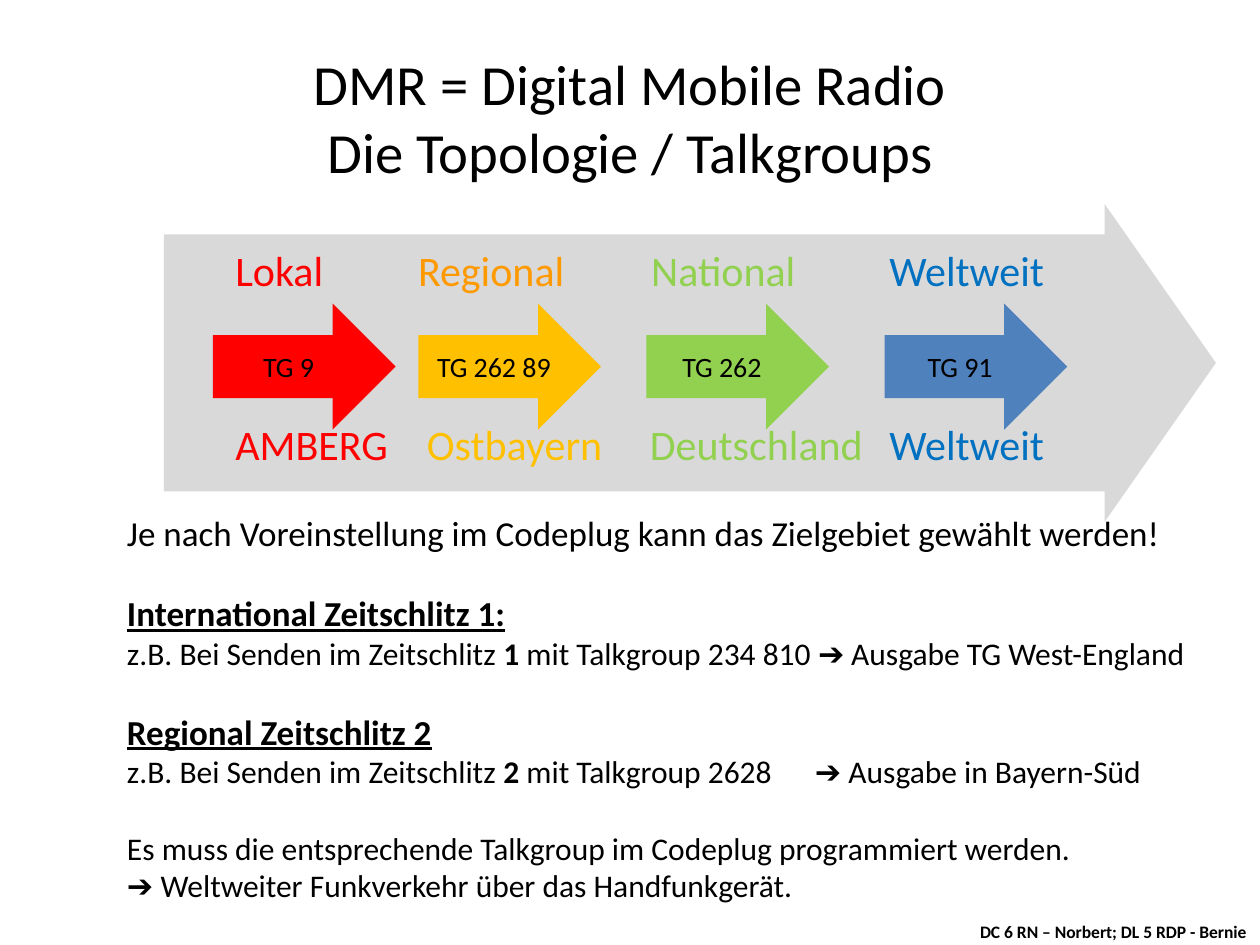
from pptx import Presentation
from pptx.dml.color import RGBColor
from pptx.enum.shapes import MSO_SHAPE
from pptx.enum.text import MSO_ANCHOR, MSO_AUTO_SIZE, PP_ALIGN
from pptx.oxml.ns import qn
from pptx.util import Inches, Pt
from lxml import etree

RIGHT_ARROW = MSO_SHAPE.RIGHT_ARROW
MIDDLE = MSO_ANCHOR.MIDDLE
LEFT, CENTER = PP_ALIGN.LEFT, PP_ALIGN.CENTER
FIT_SHAPE = MSO_AUTO_SIZE.SHAPE_TO_FIT_TEXT
BLANK_LINE = 22

deck = Presentation()
deck.slide_width, deck.slide_height = Inches(10), Inches(7.5)
page = deck.slides.add_slide(deck.slide_layouts[6])


def paint(color_format, color):
    color_format.rgb = RGBColor.from_string(color)


def write(para, text, size=18, color="000000", bold=False, underline=False,
          align=LEFT, before=0, tabs=()):
    para.alignment = align
    para.space_before = Pt(before)
    if tabs:
        properties = para._p.get_or_add_pPr()
        tab_list = etree.SubElement(properties, qn("a:tabLst"))
        for position in tabs:
            etree.SubElement(tab_list, qn("a:tab"), pos=str(Inches(position)), algn="l")
    for number, line in enumerate(text.split("\n")):
        if number:
            para.add_line_break()
        span = para.add_run()
        span.text = line
        span.font.name = "Calibri"
        span.font.size = Pt(size)
        span.font.bold = bold
        span.font.underline = underline
        paint(span.font.color, color)


title = page.shapes.add_textbox(Inches(0.5), Inches(0.3), Inches(9), Inches(1.25))
title.text_frame.word_wrap = True
title.text_frame.vertical_anchor = MIDDLE
write(title.text_frame.paragraphs[0],
      "DMR = Digital Mobile Radio\nDie Topologie / Talkgroups", size=32.4, align=CENTER)

arrows = [
    (1.3, 1.62, 8.35, 2.52, "D9D9D9", ""),
    (1.69, 2.41, 1.45, 1, "FF0000", "TG 9"),
    (3.32, 2.41, 1.45, 1, "FFC000", "TG 262 89"),
    (5.13, 2.41, 1.45, 1, "92D050", "TG 262"),
    (7.02, 2.41, 1.45, 1, "4F81BD", "TG 91"),
]
for left, top, width, height, color, talkgroup in arrows:
    arrow = page.shapes.add_shape(RIGHT_ARROW, Inches(left), Inches(top),
                                  Inches(width), Inches(height))
    arrow.shadow.inherit = False
    arrow.fill.solid()
    paint(arrow.fill.fore_color, color)
    arrow.line.fill.background()
    if talkgroup:
        arrow.text_frame.vertical_anchor = MIDDLE
        write(arrow.text_frame.paragraphs[0], talkgroup, size=16, align=CENTER)
    else:
        arrow.adjustments[0] = 0.81
        arrow.adjustments[1] = 0.35

label_rows = [
    (3.27, 7.87, (1.52, 3.29, 5.19),
     [("AMBERG", "FF0000"), ("Ostbayern", "FFC000"),
      ("Deutschland", "92D050"), ("Weltweit", "0070C0")]),
    (1.89, 7.4, (1.45, 3.3, 5.19),
     [("Lokal", "FF0000"), ("Regional", "FF9900"),
      ("National", "92D050"), ("Weltweit", "0070C0")]),
]
for top, width, stops, labels in label_rows:
    box = page.shapes.add_textbox(Inches(1.77), Inches(top), Inches(width), Inches(0.5))
    box.text_frame.word_wrap = True
    box.text_frame.auto_size = FIT_SHAPE
    para = box.text_frame.paragraphs[0]
    for number, (label, color) in enumerate(labels):
        write(para, label if number == 0 else "\t" + label, size=24, color=color,
              tabs=stops if number == 0 else ())

heading = {"size": 20, "bold": True, "underline": True}
strong = {"bold": True}
explanation = [
    (0, (), [("Je nach Voreinstellung im Codeplug kann das Zielgebiet gewählt werden!",
              {"size": 20})]),
    (BLANK_LINE, (), [("International Zeitschlitz 1:", heading)]),
    (0, (), [("z.B. Bei Senden im Zeitschlitz ", {}), ("1", strong),
             (" mit Talkgroup 234 810 ➔ Ausgabe TG West-England", {})]),
    (BLANK_LINE, (), [("Regional Zeitschlitz 2", heading)]),
    (0, (5.46,), [("z.B. Bei Senden im Zeitschlitz ", {}), ("2", strong),
                  (" mit Talkgroup 2628\t➔ Ausgabe in Bayern-Süd", {})]),
    (BLANK_LINE, (), [("Es muss die entsprechende Talkgroup im Codeplug programmiert werden.",
                       {})]),
    (0, (), [("➔ Weltweiter Funkverkehr über das Handfunkgerät.", {})]),
]
box = page.shapes.add_textbox(Inches(0.91), Inches(4.01), Inches(8.76), Inches(3.23))
box.text_frame.word_wrap = True
box.text_frame.auto_size = FIT_SHAPE
for number, (before, stops, spans) in enumerate(explanation):
    para = box.text_frame.add_paragraph() if number else box.text_frame.paragraphs[0]
    for position, (text, style) in enumerate(spans):
        write(para, text, before=before, tabs=() if position else stops, **style)

footer = page.shapes.add_textbox(Inches(7.68), Inches(7.26), Inches(2.34), Inches(0.27))
footer.text_frame.word_wrap = False
footer.text_frame.auto_size = FIT_SHAPE
write(footer.text_frame.paragraphs[0], "DC 6 RN – Norbert; DL 5 RDP - Bernie",
      size=10, bold=True)

deck.save("out.pptx")
